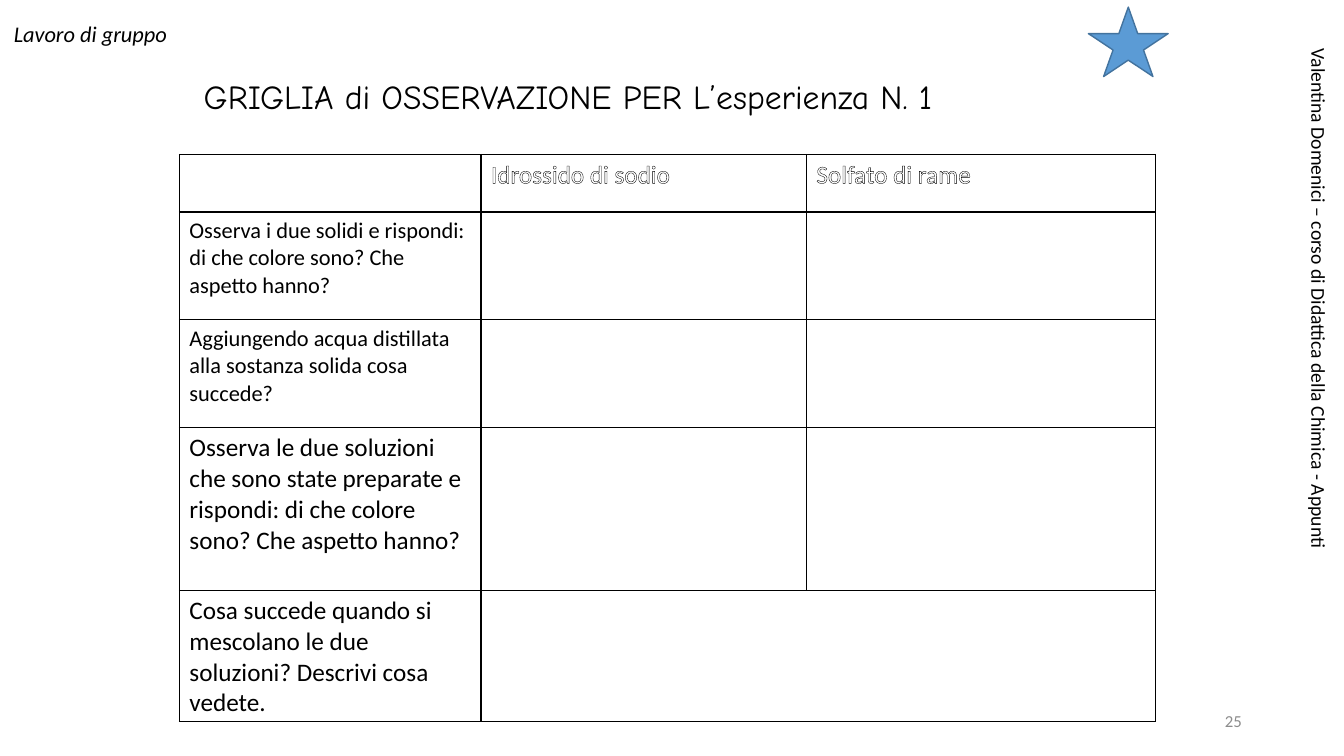
from lxml import etree
from pptx import Presentation
from pptx.dml.color import RGBColor
from pptx.enum.shapes import MSO_SHAPE
from pptx.enum.text import MSO_ANCHOR, PP_ALIGN
from pptx.oxml.ns import qn
from pptx.util import Cm, Pt

STAR = MSO_SHAPE.STAR_5_POINT
MIDDLE, TOP = MSO_ANCHOR.MIDDLE, MSO_ANCHOR.TOP
LEFT, RIGHT = PP_ALIGN.LEFT, PP_ALIGN.RIGHT

COLORS = {"text": "000000", "outlined": "FFFFFF", "star": "5B9BD5",
          "star_edge": "43739E", "number": "8C8C8C"}
BODY_FONT, TITLE_FONT = "Calibri", "Comic Neue"

COLUMN_WIDTHS = (7.6, 8.2, 8.8)
ROW_HEIGHTS = (1.45, 2.72, 2.72, 4.1, 3.3)
SUBSTANCES = ("Idrossido di sodio", "Solfato di rame")
QUESTIONS = (
    ("Osserva i due solidi e rispondi: di che colore sono? Che aspetto hanno?", 16),
    ("Aggiungendo acqua distillata alla sostanza solida cosa succede?", 16),
    ("Osserva le due soluzioni che sono state preparate e rispondi: "
     "di che colore sono? Che aspetto hanno?", 18),
    ("Cosa succede quando si mescolano le due soluzioni? Descrivi cosa vedete.", 18),
)


def rgb(name):
    return RGBColor.from_string(COLORS[name])


def add_span(para, text, size, color="text", font=BODY_FONT, italic=False):
    span = para.add_run()
    span.text = text
    span.font.size = Pt(size)
    span.font.name = font
    span.font.italic = italic
    span.font.color.rgb = rgb(color)
    return span


def line_xml(parent, tag, points, color):
    """Append a solid line element to the parent."""
    line = etree.SubElement(parent, qn(tag), w=str(Pt(points)))
    fill = etree.SubElement(line, qn("a:solidFill"))
    etree.SubElement(fill, qn("a:srgbClr"), val=COLORS[color])
    return line


def add_title(page, box):
    title = page.shapes.title
    title.left, title.top, title.width, title.height = map(Cm, box)
    title.text_frame.vertical_anchor = MIDDLE
    para = title.text_frame.paragraphs[0]
    para.alignment = LEFT
    para.line_spacing = 0.9
    add_span(para, "GRIGLIA di OSSERVAZIONE PER L’esperienza N. 1", 24, font=TITLE_FONT)


def add_label(page, box, text, size, wrap=True, align=LEFT, anchor=TOP,
              rotation=0, **style):
    label = page.shapes.add_textbox(*map(Cm, box))
    label.rotation = rotation
    frame = label.text_frame
    frame.word_wrap = wrap
    frame.vertical_anchor = anchor
    para = frame.paragraphs[0]
    para.alignment = align
    add_span(para, text, size, **style)


def add_star(page, box):
    star = page.shapes.add_shape(STAR, *map(Cm, box))
    star.shadow.inherit = False
    star.fill.solid()
    star.fill.fore_color.rgb = rgb("star")
    star.line.color.rgb = rgb("star_edge")
    star.line.width = Pt(1)


def format_cell(cell):
    # Borders come before the fill in the cell properties
    properties = cell._tc.get_or_add_tcPr()
    for side in ("a:lnL", "a:lnR", "a:lnT", "a:lnB"):
        line_xml(properties, side, 1, "text")
    cell.fill.background()


def add_grid(page, left, top):
    box = (left, top, sum(COLUMN_WIDTHS), sum(ROW_HEIGHTS))
    grid = page.shapes.add_table(len(ROW_HEIGHTS), len(COLUMN_WIDTHS),
                                 *map(Cm, box)).table
    grid.first_row = grid.horz_banding = False
    for column, width in zip(grid.columns, COLUMN_WIDTHS):
        column.width = Cm(width)
    for row, height in zip(grid.rows, ROW_HEIGHTS):
        row.height = Cm(height)
    for cell in grid.iter_cells():
        format_cell(cell)

    # Outlined column heads
    for column, substance in enumerate(SUBSTANCES, 1):
        para = grid.cell(0, column).text_frame.paragraphs[0]
        span = add_span(para, substance, 18, "outlined")
        properties = span.font._element
        properties.insert(0, line_xml(properties, "a:ln", 0.75, "text"))

    # Questions, the last with one shared answer cell
    for row, (question, size) in enumerate(QUESTIONS, 1):
        add_span(grid.cell(row, 0).text_frame.paragraphs[0], question, size)
    last = len(QUESTIONS)
    grid.cell(last, 1).merge(grid.cell(last, 2))


def build_observation_page(deck):
    page = deck.slides.add_slide(deck.slide_layouts[5])
    add_title(page, (4.88, 1.09, 22.86, 2.8))
    add_star(page, (27.43, 0.18, 2.01, 1.75))
    add_label(page, (0.1, 0.38, 4.42, 0.94), "Lavoro di gruppo", 16,
              wrap=False, italic=True)
    add_grid(page, 4.52, 3.89)
    add_label(page, (23.93, 17.65, 7.62, 1.02), "25", 12,
              align=RIGHT, anchor=MIDDLE, color="number")
    add_label(page, (25.27, 8.51, 15.93, 0.86),
              "Valentina Domenici – corso di Didattica della Chimica - Appunti",
              14, rotation=90)


def main():
    deck = Presentation()
    deck.slide_width, deck.slide_height = Cm(33.87), Cm(19.05)
    build_observation_page(deck)
    deck.save("out.pptx")


if __name__ == "__main__":
    main()
